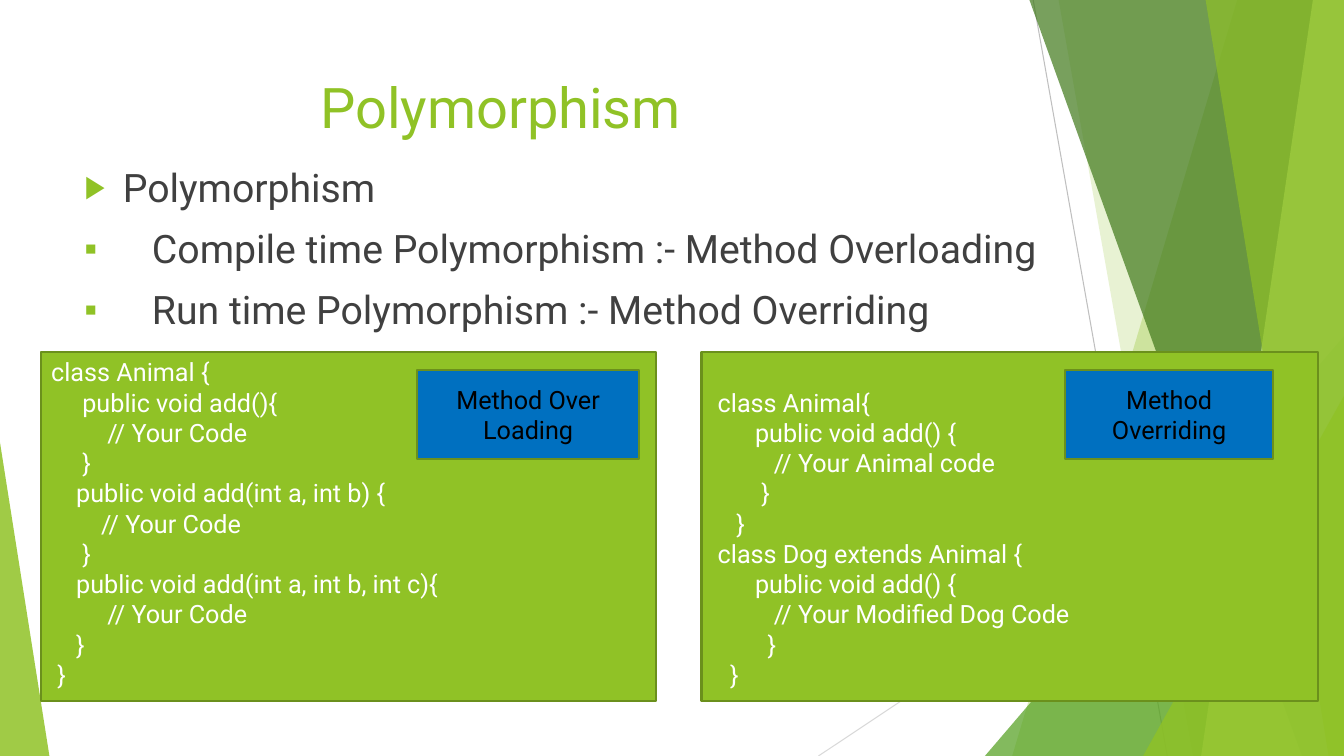
from lxml.etree import SubElement
from pptx import Presentation
from pptx.dml.color import RGBColor
from pptx.enum.shapes import MSO_CONNECTOR, MSO_SHAPE
from pptx.enum.text import MSO_ANCHOR, PP_ALIGN
from pptx.oxml.ns import qn
from pptx.util import Pt

WHITE = RGBColor(0xFF, 0xFF, 0xFF)
BLACK = RGBColor(0, 0, 0)
BODY_GREY = RGBColor(0x40, 0x40, 0x40)
RULE_GREY = RGBColor(0xBF, 0xBF, 0xBF)
PALE_GREY = RGBColor(0xD9, 0xD9, 0xD9)
GREEN = RGBColor(0x90, 0xC2, 0x26)
LEAF = RGBColor(0x54, 0xA0, 0x21)
FOREST = RGBColor(0x3F, 0x78, 0x19)
LIME = RGBColor(0xC0, 0xE4, 0x74)
EDGE_GREEN = RGBColor(0x6B, 0x90, 0x1C)
BLUE = RGBColor(0x00, 0x70, 0xC0)

FONT = "Roboto"
CODE_SIZE = 18
CODE_SPACE = 4.45
CODE_LINE = 21.6
INSET = 3.6
SLIDE = (0, 0, 960, 540)

TOPICS = [
    ("▶", 27.36, "Polymorphism"),
    ("▪", 48.2, "Compile time Polymorphism :- Method Overloading"),
    ("▪", 48.2, "Run time Polymorphism :- Method Overriding"),
]
OVERLOADING = [
    (0, "class Animal {"),
    (5, "public void add(){"),
    (9, "// Your Code"),
    (5, "}"),
    (4, "public void add(int a, int b) {"),
    (8, "// Your Code"),
    (5, "}"),
    (4, "public void add(int a, int b, int c){"),
    (9, "// Your Code"),
    (4, "}"),
    (1, "}"),
]
OVERRIDING = [
    (1, "class Animal{"),
    (7, "public void add() {"),
    (10, "// Your Animal code"),
    (8, "}"),
    (4, "}"),
    (1, "class Dog extends Animal {"),
    (7, "public void add() {"),
    (10, "// Your Modified Dog Code"),
    (9, "}"),
    (3, "}"),
]


def write(paragraph, text, size, color, margin=0, indent=0):
    paragraph.text = text
    for run in paragraph.runs:
        run.font.name = FONT
        run.font.size = Pt(size)
        run.font.color.rgb = color
    properties = paragraph._p.get_or_add_pPr()
    properties.set("marL", str(Pt(margin)))
    properties.set("indent", str(Pt(indent)))
    return properties


def add_bullet(properties, symbol):
    color = SubElement(properties, qn("a:buClr"))
    SubElement(color, qn("a:srgbClr"), val=str(GREEN))
    SubElement(properties, qn("a:buSzPct"), val="80000")
    SubElement(properties, qn("a:buFont"), typeface=FONT)
    SubElement(properties, qn("a:buChar"), char=symbol)


def paint(facet, color, opacity):
    facet.shadow.inherit = False
    facet.line.fill.background()
    facet.fill.solid()
    facet.fill.fore_color.rgb = color
    tint = facet.fill._xPr.find(qn("a:solidFill"))[0]
    SubElement(tint, qn("a:alpha"), val=str(opacity * 1000))


def add_backdrop(slide, box):
    left, top, width, height = box
    right, bottom = left + width, top + height

    def rule(start, end, color):
        x1, y1 = start
        x2, y2 = end
        line = slide.shapes.add_connector(
            MSO_CONNECTOR.STRAIGHT, Pt(x1), Pt(y1), Pt(x2), Pt(y2))
        line.line.color.rgb = color
        line.line.width = Pt(0.75)
        SubElement(line._element.spPr, qn("a:effectLst"))

    def band(upper, lower, color, opacity):
        outline = slide.shapes.build_freeform(
            left + upper, top - 0.6, scale=Pt(1))
        outline.add_line_segments(
            [(right, top - 0.6), (right, bottom), (left + lower, bottom)])
        paint(outline.convert_to_shape(), color, opacity)

    def corner(x, wide, tall, apex, color, opacity):
        triangle = slide.shapes.add_shape(
            MSO_SHAPE.ISOSCELES_TRIANGLE,
            Pt(x), Pt(bottom - tall), Pt(wide), Pt(tall))
        triangle.adjustments[0] = apex
        paint(triangle, color, opacity)

    rule((left + 738, top), (left + 833.8, bottom), RULE_GREY)
    rule((right, top + 290.2), (left + 584.6, bottom), PALE_GREY)
    band(884.2, 722.9, GREEN, 30)
    band(756, 851.8, GREEN, 20)
    corner(right - 256.5, 256.5, 300, 1, LEAF, 72)
    band(735.1, 929.5, FOREST, 70)
    band(938.2, 858.2, LIME, 70)
    band(861.1, 949.2, GREEN, 65)
    corner(right - 143.5, 143.5, 257.2, 1, GREEN, 80)
    corner(left, 35.3, 223.9, 0, GREEN, 85)


def add_title(slide, box):
    title = slide.shapes.add_textbox(*map(Pt, box)).text_frame
    title.word_wrap = True
    write(title.paragraphs[0], "Polymorphism", 40, GREEN, margin=168.5)


def add_topics(slide, box):
    topics = slide.shapes.add_textbox(*map(Pt, box)).text_frame
    topics.word_wrap = True
    topics.text = "\n".join(text for _, _, text in TOPICS)
    for paragraph, (symbol, margin, text) in zip(topics.paragraphs, TOPICS):
        paragraph.space_before = Pt(10)
        properties = write(paragraph, text, 28, BODY_GREY, margin, -margin)
        add_bullet(properties, symbol)


def add_panel(slide, box, color):
    panel = slide.shapes.add_shape(MSO_SHAPE.RECTANGLE, *map(Pt, box))
    panel.shadow.inherit = False
    panel.fill.solid()
    panel.fill.fore_color.rgb = color
    panel.line.color.rgb = EDGE_GREEN
    panel.line.width = Pt(1.5)
    panel.text_frame.word_wrap = True
    return panel.text_frame


def add_example(slide, box, code_lines, skipped, label, label_x, label_width):
    left, top, _, _ = box
    code = add_panel(slide, box, GREEN)
    code.vertical_anchor = MSO_ANCHOR.TOP
    code.margin_top = Pt(INSET + skipped * CODE_LINE)
    code.text = "\n".join(text for _, text in code_lines)
    for paragraph, (depth, text) in zip(code.paragraphs, code_lines):
        paragraph.alignment = PP_ALIGN.LEFT
        write(paragraph, text, CODE_SIZE, WHITE, depth * CODE_SPACE)

    tag_box = (left + label_x, top + 13, label_width, 63.4)
    tag = add_panel(slide, tag_box, BLUE)
    tag.vertical_anchor = MSO_ANCHOR.MIDDLE
    tag.paragraphs[0].alignment = PP_ALIGN.CENTER
    write(tag.paragraphs[0], label, CODE_SIZE, BLACK)


def main():
    deck = Presentation()
    deck.slide_width, deck.slide_height = Pt(SLIDE[2]), Pt(SLIDE[3])
    slide = deck.slides.add_slide(deck.slide_layouts[6])
    add_backdrop(slide, SLIDE)
    add_title(slide, (53.3, 48.2, 676.8, 64.8))
    add_topics(slide, (53.3, 113, 720.7, 138.2))
    add_example(slide, (29.5, 251.3, 439.2, 249.8), OVERLOADING, 0,
                "Method Over Loading", 268.6, 158.4)
    add_example(slide, (501.1, 251.3, 440.6, 249.8), OVERRIDING, 1,
                "Method Overriding", 259.9, 148.3)
    deck.save("out.pptx")


if __name__ == "__main__":
    main()
